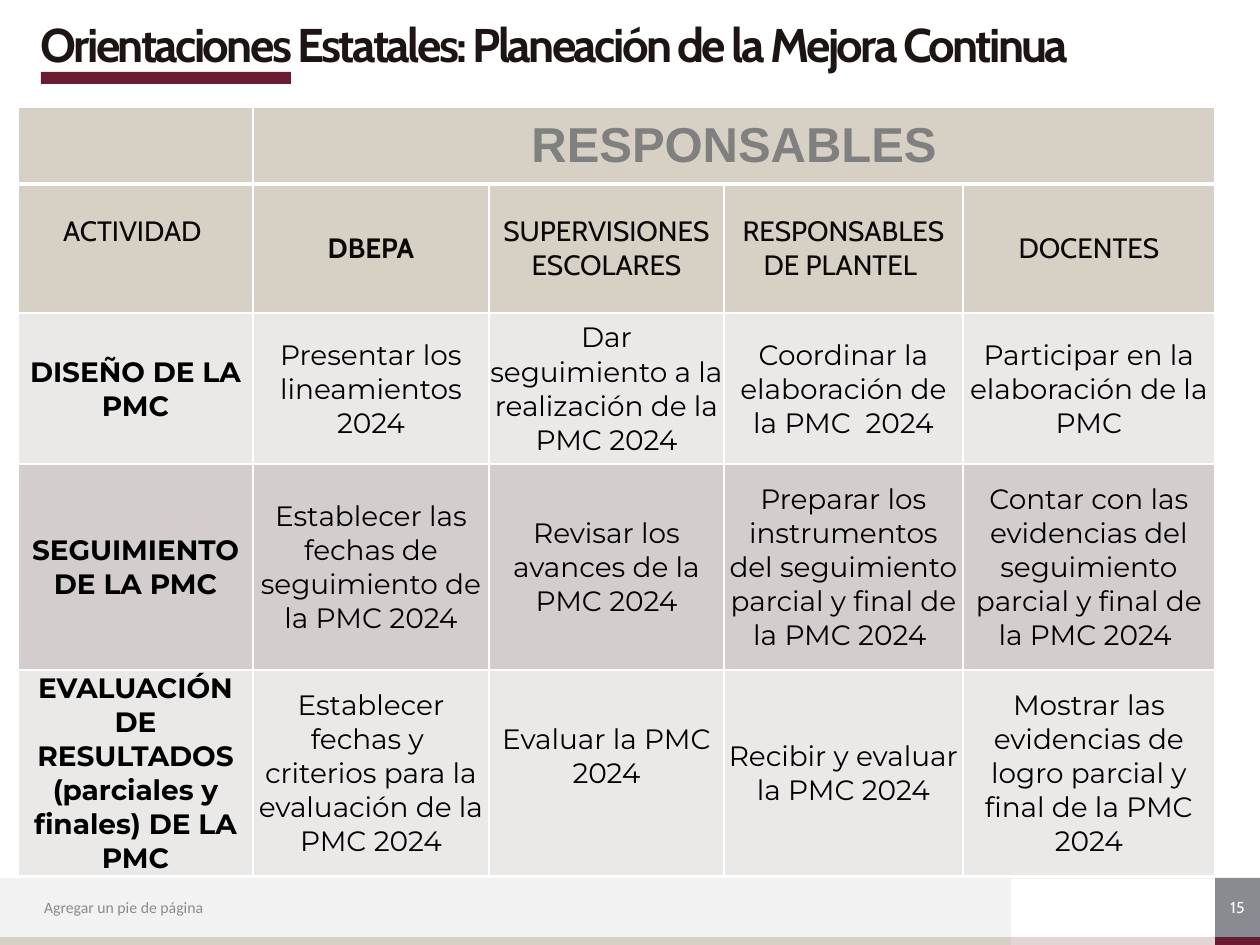
import pptx
import pptx.dml.color
import pptx.enum.shapes
import pptx.enum.text
import pptx.oxml
import pptx.oxml.ns
import pptx.util

SCALE = 914400 / 126  # EMU per px
COLORS = {
    "wine": "691C32", "rose": "E2D6D3", "sand": "D6D1C4", "mist": "F2F2F2",
    "steel": "898B90", "white": "FFFFFF", "black": "000000", "ink": "1D1513",
    "header": "0D0808", "gray": "808080", "light": "EBE8E8", "dark": "D4CDCE",
}
FORMATS = {
    "title": {"name": "Cabin", "size": 27, "bold": True, "color": "ink"},
    "footer": {"name": "Calibri", "size": 9, "bold": False, "color": "steel"},
    "number": {"name": "Cabin", "size": 9, "bold": False, "color": "white"},
    "banner": {"name": "Arial", "size": 28, "bold": True, "color": "gray"},
    "header": {"name": "Cabin", "size": 16, "bold": False, "color": "header"},
    "header bold": {"name": "Cabin", "size": 16, "bold": True, "color": "header"},
    "body": {"name": "Montserrat", "size": 16, "bold": False, "color": "black"},
    "activity": {"name": "Montserrat", "size": 16, "bold": True, "color": "black"},
}
CENTER = pptx.enum.text.PP_ALIGN.CENTER
MIDDLE = pptx.enum.text.MSO_ANCHOR.MIDDLE
SIDES = ("left", "top", "right", "bottom")

COLUMNS = [235, 236, 235, 239, 252]
ROWS = [77, 129, 151, 206, 206]
ROW_FILLS = ["sand", "sand", "light", "dark", "light"]
HEADERS = ["ACTIVIDAD ", "DBEPA", "SUPERVISIONES ESCOLARES",
           "RESPONSABLES DE PLANTEL ", "DOCENTES"]
ACTIVITIES = [
    ["DISEÑO DE LA PMC", "Presentar los lineamientos 2024",
     "Dar seguimiento a la realización de la PMC 2024",
     "Coordinar la elaboración de la PMC  2024",
     "Participar en la elaboración de la PMC"],
    ["SEGUIMIENTO DE LA PMC",
     "Establecer las fechas de seguimiento de la PMC 2024",
     "Revisar los avances de la PMC 2024",
     "Preparar los instrumentos del seguimiento parcial y final de la PMC 2024 ",
     "Contar con las evidencias del seguimiento parcial y final de la PMC 2024 "],
    ["EVALUACIÓN DE RESULTADOS (parciales y finales) DE LA PMC",
     "Establecer fechas y  criterios para la evaluación de la PMC 2024",
     "Evaluar la PMC 2024", "Recibir y evaluar la PMC 2024",
     "Mostrar las evidencias de logro parcial y final de la PMC 2024"],
]
RAISED = {(1, 0): 34, (4, 2): 34}  # cells whose text sits half a line higher


def px(length):
    return pptx.util.Emu(round(length * SCALE))


def rgb(color):
    return pptx.dml.color.RGBColor.from_string(COLORS[color])


class SlideBuilder:
    """Holds the text formats and the slide being built."""

    def __init__(self, slide, formats):
        self.slide = slide
        self.formats = formats

    def span(self, para, text, style, spacing=None):
        span = para.add_run()
        span.text = text
        for key, value in self.formats[style].items():
            if key == "color":
                span.font.color.rgb = rgb(value)
            else:
                setattr(span.font, key, pptx.util.Pt(value) if key == "size" else value)
        if spacing is not None:
            span._r.get_or_add_rPr().set("spc", str(spacing))

    def frame(self, box):
        """Give a shape a wrapped, centred frame without margins; return its paragraph."""
        frame = box.text_frame
        frame.word_wrap = True
        frame.vertical_anchor = MIDDLE
        for side in SIDES:
            setattr(frame, f"margin_{side}", 0)
        return frame.paragraphs[0]

    def text(self, bounds, text, style, spacing=None, leading=None):
        para = self.frame(self.slide.shapes.add_textbox(*map(px, bounds)))
        para.line_spacing = leading
        self.span(para, text, style, spacing)

    def bar(self, bounds, color, text=None, style=None):
        bar = self.slide.shapes.add_shape(
            pptx.enum.shapes.MSO_SHAPE.RECTANGLE, *map(px, bounds))
        bar.shadow.inherit = False
        bar.fill.solid()
        bar.fill.fore_color.rgb = rgb(color)
        bar.line.fill.background()
        if text:
            para = self.frame(bar)
            para.alignment = CENTER
            self.span(para, text, style)

    def line(self, start, end, color, width):
        line = self.slide.shapes.add_connector(
            pptx.enum.shapes.MSO_CONNECTOR.STRAIGHT, *map(px, start + end))
        line.line.color.rgb = rgb(color)
        line.line.width = pptx.util.Pt(width)
        line._element.spPr.append(pptx.oxml.parse_xml(
            f'<a:effectLst {pptx.oxml.ns.nsdecls("a")}/>'))

    def table(self, left, top, columns, rows):
        bounds = (left, top, sum(columns), sum(rows))
        table = self.slide.shapes.add_table(
            len(rows), len(columns), *map(px, bounds)).table
        table.first_row = table.horz_banding = False
        for column, width in zip(table.columns, columns):
            column.width = px(width)
        for row, height in zip(table.rows, rows):
            row.height = px(height)
        return table

    def cell(self, cell, color, borders, margins):
        """Set borders (points by side), fill and margins of a table cell."""
        properties = cell._tc.get_or_add_tcPr()
        for side in "LRTB":
            properties.append(pptx.oxml.parse_xml(
                f'<a:ln{side} {pptx.oxml.ns.nsdecls("a")} w="{borders[side] * 12700}">'
                f'<a:solidFill><a:srgbClr val="{COLORS["white"]}"/></a:solidFill>'
                f'</a:ln{side}>'))
        cell.fill.solid()
        cell.fill.fore_color.rgb = rgb(color)
        cell.vertical_anchor = MIDDLE
        for side, margin in zip(SIDES, margins):
            setattr(cell, f"margin_{side}", px(margin))

    def cell_text(self, cell, text, style):
        para = cell.text_frame.paragraphs[0]
        para.alignment = CENTER
        self.span(para, text, style)


def add_responsibilities(builder):
    table = builder.table(18, 107, COLUMNS, ROWS)
    texts = [["", "RESPONSABLES", "", "", ""], HEADERS] + ACTIVITIES
    for i, row in enumerate(texts):
        for j, text in enumerate(row):
            cell = table.cell(i, j)
            borders = {"L": 1, "R": 1, "T": 3 if i == 1 else 1, "B": 3 if i == 0 else 1}
            edge = 1 if i > 1 else 0
            builder.cell(cell, ROW_FILLS[i], borders,
                         (edge, edge, edge, RAISED.get((i, j), 0)))
            if i == 0:
                style = "banner"
            elif i == 1:
                style = "header bold" if j == 1 else "header"
            else:
                style = "activity" if j == 0 else "body"
            if text:
                builder.cell_text(cell, text, style)
    table.cell(0, 1).merge(table.cell(0, 4))


def main():
    deck = pptx.Presentation()
    deck.slide_width, deck.slide_height = px(1260), px(945)
    builder = SlideBuilder(deck.slides.add_slide(deck.slide_layouts[6]), FORMATS)

    builder.bar((1011, 937, 204, 8), "rose")
    builder.bar((0, 878, 1011, 59), "mist")
    builder.bar((0, 937, 1011, 8), "sand")
    builder.bar((1215, 937, 45, 8), "wine")
    builder.line((1260, 878), (0, 878), "mist", 0.5)
    builder.text((44, 887, 586, 40), "Agregar un pie de página", "footer")
    builder.bar((1215, 878, 45, 59), "steel", "15", "number")

    builder.bar((41, 72, 250, 12), "wine")
    add_responsibilities(builder)
    builder.text((41, 23, 1211, 49),
                 "Orientaciones Estatales: Planeación de la Mejora Continua",
                 "title", spacing=-150, leading=0.9)
    deck.save("out.pptx")


if __name__ == "__main__":
    main()
